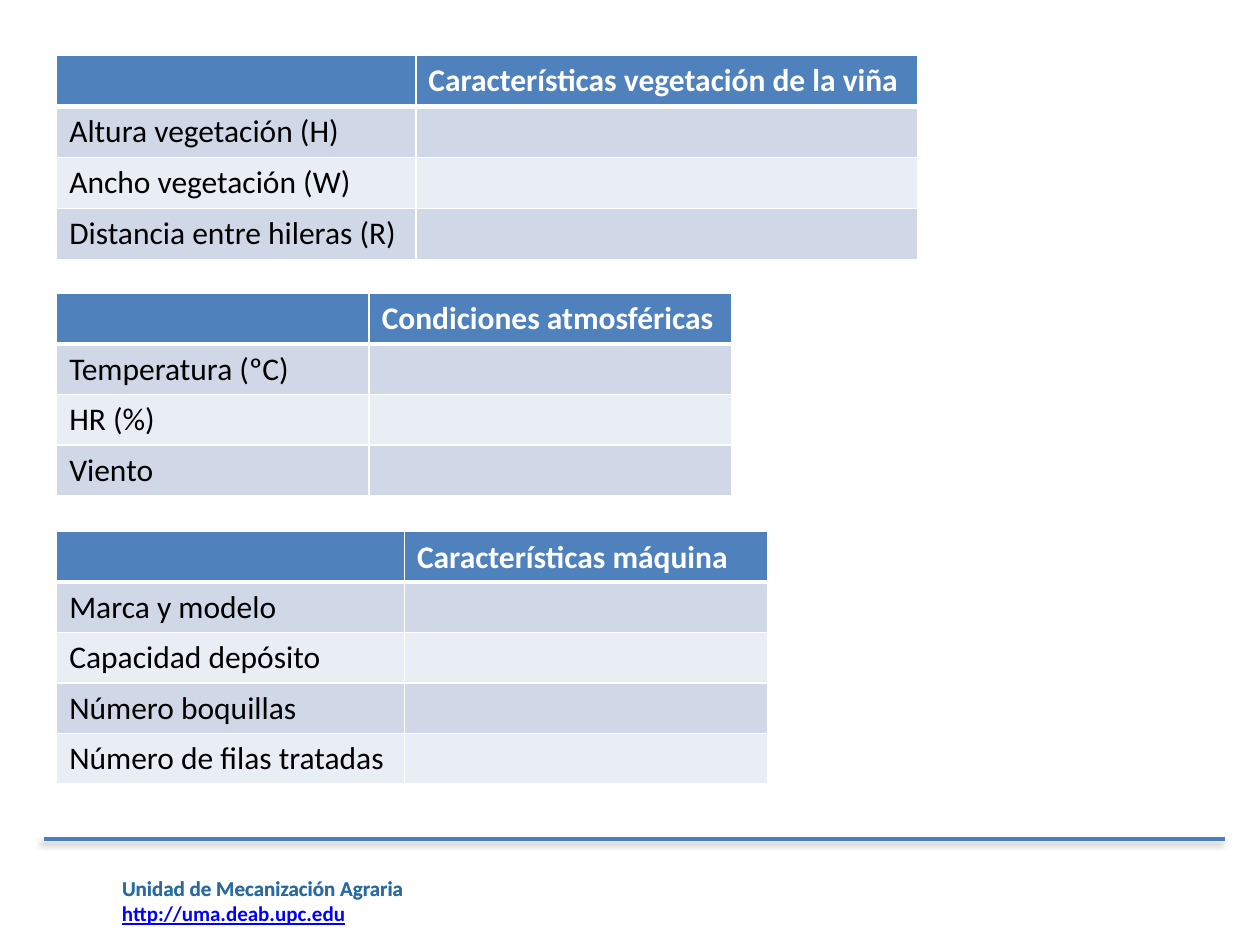
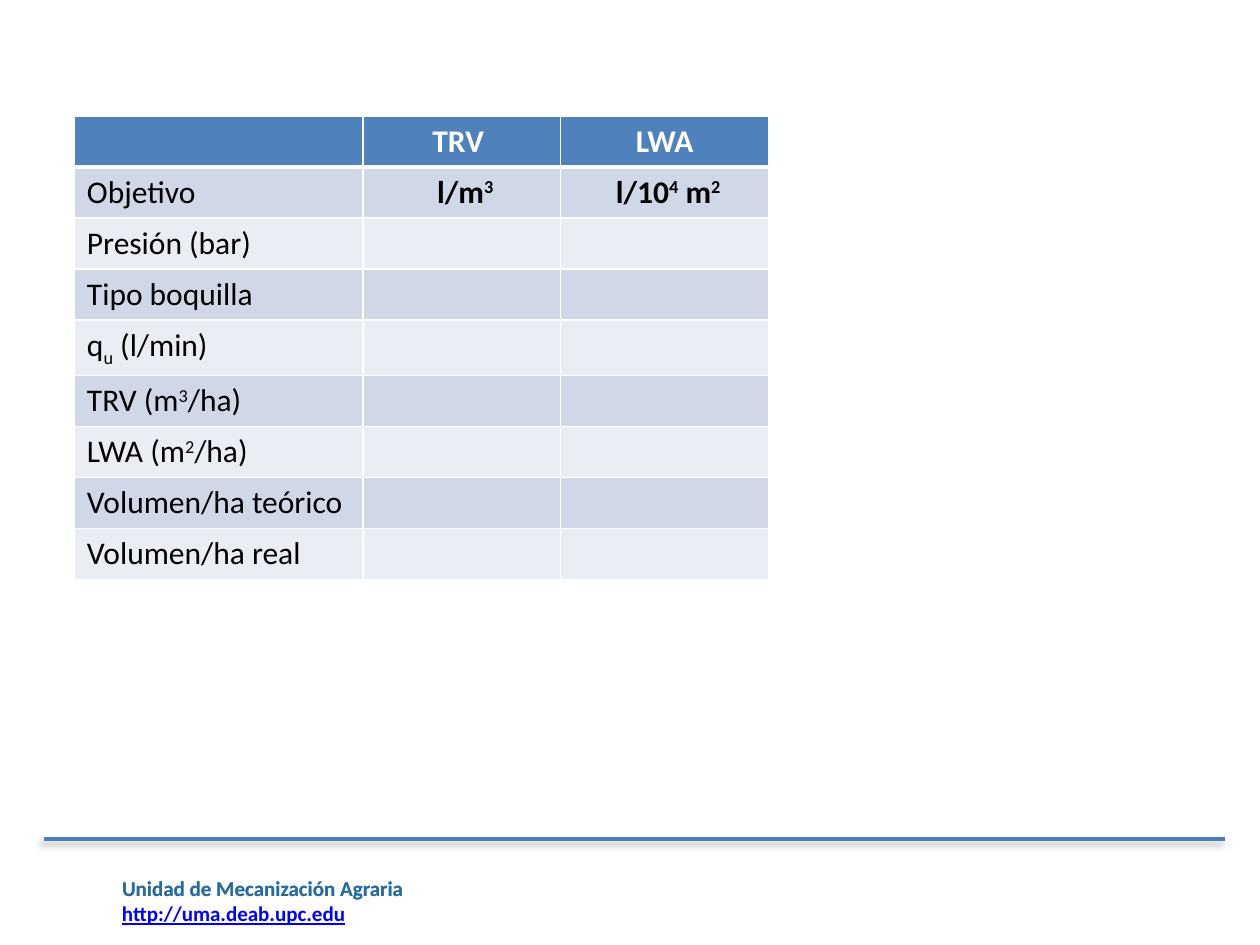
from dataclasses import dataclass

from lxml import etree
from pptx import Presentation
from pptx.dml.color import RGBColor
from pptx.enum.shapes import MSO_CONNECTOR
from pptx.enum.text import PP_ALIGN
from pptx.oxml import parse_xml
from pptx.oxml.ns import nsdecls, qn
from pptx.util import Inches, Pt

STRAIGHT = MSO_CONNECTOR.STRAIGHT
LEFT, CENTER = PP_ALIGN.LEFT, PP_ALIGN.CENTER
SUPERSCRIPT, SUBSCRIPT = 30000, -25000
BLANK_LAYOUT = 6


@dataclass(frozen=True)
class Theme:
    font: str = "Calibri"
    table_size: int = 18
    footer_size: int = 12
    header: str = "4F81BD"
    bands: tuple = ("D0D8E8", "E9EDF4")
    border: str = "FFFFFF"
    header_text: str = "FFFFFF"
    body_text: str = "000000"
    rule: str = "4B7EBC"
    unit_back: str = "00B0F0"
    unit_front: str = "336699"
    address: str = "0000FF"


class Deck:
    def __init__(self, theme):
        self.theme = theme
        self.presentation = Presentation()
        self.presentation.slide_width = Inches(10)
        self.presentation.slide_height = Inches(7.5)
        self.slide = None

    def add_slide(self):
        layout = self.presentation.slide_layouts[BLANK_LAYOUT]
        self.slide = self.presentation.slides.add_slide(layout)
        self.add_footer()

    def add_footer(self):
        theme = self.theme
        for color in (theme.unit_back, theme.unit_front):
            self.add_text(6.9, 3.52, "Unidad de Mecanización Agraria", color)
        self.add_text(7.1, 2.07, "http://uma.deab.upc.edu", theme.address, underline=True)
        self.add_rule()

    def add_text(self, top, width, text, color, underline=False):
        box = self.slide.shapes.add_textbox(
            Inches(0.87), Inches(top), Inches(width), Inches(0.3))
        box.text_frame.word_wrap = True
        run = self.add_run(box.text_frame.paragraphs[0], text,
                           self.theme.footer_size, color, bold=True)
        run.font.underline = underline

    def add_run(self, paragraph, text, size, color, bold):
        run = paragraph.add_run()
        run.text = text
        run.font.name = self.theme.font
        run.font.size = Pt(size)
        run.font.bold = bold
        run.font.color.rgb = RGBColor.from_string(color)
        return run

    def add_rule(self):
        """Draw the footer line with its soft shadow."""
        line = self.slide.shapes.add_connector(
            STRAIGHT, Inches(0.35), Inches(6.66), Inches(9.72), Inches(6.66))
        line.line.color.rgb = RGBColor.from_string(self.theme.rule)
        line.line.width = Pt(2.25)
        line._element.spPr.append(parse_xml(
            f'<a:effectLst {nsdecls("a")}>'
            f'<a:outerShdw blurRad="{Pt(4)}" dist="{Pt(3)}" dir="{135 * 60000}" rotWithShape="0">'
            '<a:srgbClr val="000000"><a:alpha val="40000"/></a:srgbClr>'
            '</a:outerShdw></a:effectLst>'))

    def add_table(self, left, top, column_widths, row_height, rows, value_align=LEFT):
        """Rows hold cells; a cell is a text or a list of (text, baseline) runs."""
        table = self.slide.shapes.add_table(
            len(rows), len(column_widths), Inches(left), Inches(top),
            Inches(sum(column_widths)), Inches(row_height * len(rows))).table
        for column, width in zip(table.columns, column_widths):
            column.width = Inches(width)
        for row_index, row in enumerate(rows):
            for column_index in range(len(column_widths)):
                content = row[column_index] if column_index < len(row) else ""
                align = value_align if column_index else LEFT
                self.style_cell(table.cell(row_index, column_index), row_index)
                self.fill_cell(table.cell(row_index, column_index), content, align,
                               is_header=row_index == 0,
                               bold=row_index == 0 or column_index > 0)

    def style_cell(self, cell, row_index):
        theme = self.theme
        widths = {"lnL": 1, "lnR": 1,
                  "lnT": 3 if row_index == 1 else 1,
                  "lnB": 3 if row_index == 0 else 1}
        properties = cell._tc.get_or_add_tcPr()
        for side, width in widths.items():
            border = etree.SubElement(properties, qn(f"a:{side}"), w=str(Pt(width)))
            fill = etree.SubElement(border, qn("a:solidFill"))
            etree.SubElement(fill, qn("a:srgbClr"), val=theme.border)
        color = theme.bands[(row_index - 1) % 2] if row_index else theme.header
        cell.fill.solid()
        cell.fill.fore_color.rgb = RGBColor.from_string(color)

    def fill_cell(self, cell, content, align, is_header, bold):
        theme = self.theme
        if not content:
            return
        paragraph = cell.text_frame.paragraphs[0]
        paragraph.alignment = align
        color = theme.header_text if is_header else theme.body_text
        parts = [(content, 0)] if isinstance(content, str) else content
        for text, baseline in parts:
            run = self.add_run(paragraph, text, theme.table_size, color, bold)
            if baseline:
                run.font._element.set("baseline", str(baseline))


def add_field_data_slide(deck):
    deck.add_slide()
    deck.add_table(0.45, 0.44, (2.85, 3.98), 0.405, [
        ("", "Características vegetación de la viña"),
        ("Altura vegetación (H)",),
        ("Ancho vegetación (W)",),
        ("Distancia entre hileras (R)",),
    ])
    deck.add_table(0.45, 2.33, (2.48, 2.88), 0.4, [
        ("", "Condiciones atmosféricas"),
        ("Temperatura (ºC)",),
        ("HR (%)",),
        ("Viento",),
    ])
    deck.add_table(0.45, 4.22, (2.76, 2.88), 0.4, [
        ("", "Características máquina"),
        ("Marca y modelo",),
        ("Capacidad depósito",),
        ("Número boquillas",),
        ("Número de filas tratadas",),
    ])


def add_dose_slide(deck):
    squared, cubed = ("2", SUPERSCRIPT), ("3", SUPERSCRIPT)
    deck.add_slide()
    deck.add_table(0.59, 0.92, (2.29, 1.57, 1.65), 0.405, [
        ("", "TRV ", "LWA"),
        ("Objetivo",
         [(" l/m", 0), cubed],
         [(" l/10", 0), ("4", SUPERSCRIPT), (" m", 0), squared]),
        ("Presión (bar)",),
        ("Tipo boquilla",),
        ([("q", 0), ("u", SUBSCRIPT), (" (l/min)", 0)],),
        ([("TRV (m", 0), cubed, ("/ha)", 0)],),
        ([("LWA (m", 0), squared, ("/ha)", 0)],),
        ("Volumen/ha teórico",),
        ("Volumen/ha real",),
    ], value_align=CENTER)


def main():
    deck = Deck(Theme())
    add_field_data_slide(deck)
    add_dose_slide(deck)
    deck.presentation.save("out.pptx")


if __name__ == "__main__":
    main()
